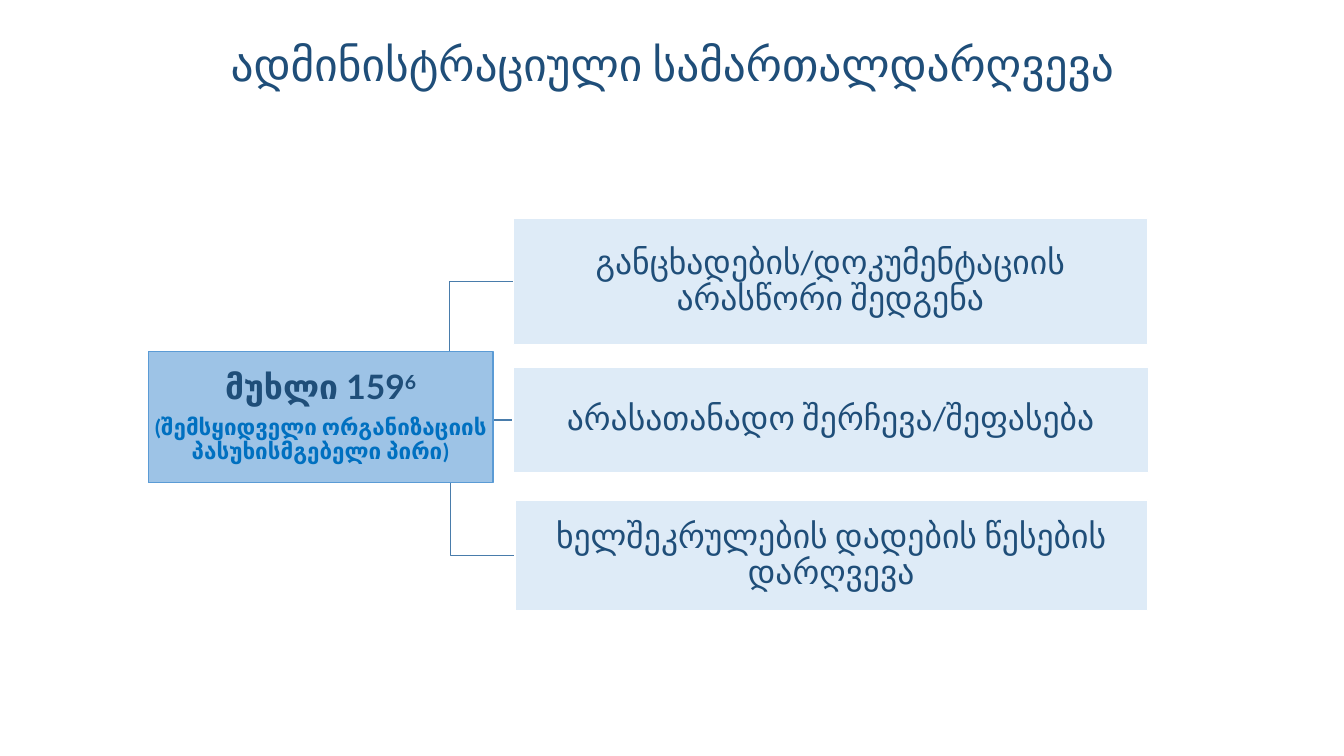
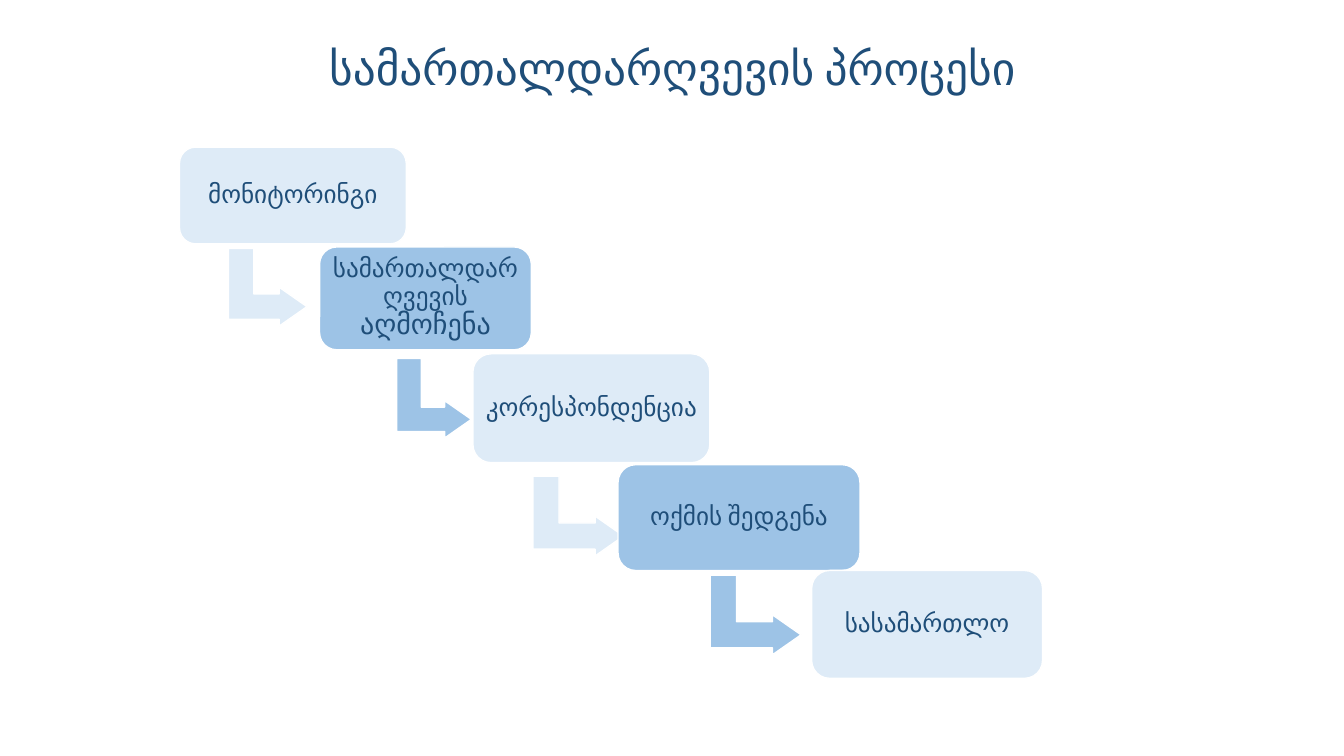
from dataclasses import dataclass

import pptx
import pptx.dml.color
import pptx.enum.shapes
import pptx.enum.text
import pptx.oxml
import pptx.oxml.ns
import pptx.util

Inches = pptx.util.Inches
Pt = pptx.util.Pt
RGBColor = pptx.dml.color.RGBColor
SHAPE = pptx.enum.shapes.MSO_SHAPE
ANCHOR = pptx.enum.text.MSO_ANCHOR

NAVY = RGBColor(0x1F, 0x4E, 0x79)
BLUE = RGBColor(0x00, 0x70, 0xC0)
EDGE = RGBColor(0x5B, 0x9B, 0xD5)
BRANCH = RGBColor(0x49, 0x7C, 0xAB)
MID = RGBColor(0x9D, 0xC3, 0xE6)
PALE = RGBColor(0xDE, 0xEB, 0xF7)
WHITE = RGBColor(0xFF, 0xFF, 0xFF)
FONT = "Calibri"


@dataclass(frozen=True)
class Frame:
    left: float
    top: float
    width: float
    height: float

    def inches(self) -> tuple:
        return tuple(Inches(v) for v in (self.left, self.top, self.width, self.height))


@dataclass(frozen=True)
class Words:
    text: str
    size: float
    color: RGBColor = NAVY
    font: str = FONT
    bold: bool = False
    superscript: bool = False


@dataclass(frozen=True)
class Violation:
    frame: Frame
    text: str


@dataclass(frozen=True)
class Step:
    frame: Frame
    words: tuple
    arrow: Frame | None = None


def write(paragraph, words: tuple) -> None:
    """Fill a centred paragraph with formatted runs."""
    paragraph.alignment = pptx.enum.text.PP_ALIGN.CENTER
    paragraph.line_spacing = 0.9
    for part in words:
        run = paragraph.add_run()
        run.text = part.text
        run.font.name = part.font
        run.font.size = Pt(part.size)
        run.font.bold = part.bold
        run.font.color.rgb = part.color
        if part.superscript:
            run._r.get_or_add_rPr().set("baseline", "30000")


def add_titled_slide(deck, text: str, top: float):
    slide = deck.slides.add_slide(deck.slide_layouts[5])
    title = slide.shapes.title
    title.left, title.top, title.width, title.height = Frame(1.67, top, 10, 1.69).inches()
    frame = title.text_frame
    frame.auto_size = pptx.enum.text.MSO_AUTO_SIZE.NONE
    frame.word_wrap = True
    frame.vertical_anchor = ANCHOR.TOP
    frame.margin_top = Inches(0.24)
    write(frame.paragraphs[0], (Words(text, 32.4),))
    return slide


def add_block(slide, kind, frame: Frame, fill: RGBColor, line: RGBColor = WHITE):
    block = slide.shapes.add_shape(kind, *frame.inches())
    block.shadow.inherit = False
    block.fill.solid()
    block.fill.fore_color.rgb = fill
    block.line.color.rgb = line
    block.line.width = Pt(1)
    return block


def set_text(block, inset: float, *lines: tuple) -> None:
    frame = block.text_frame
    frame.word_wrap = True
    frame.vertical_anchor = ANCHOR.MIDDLE
    frame.margin_left = frame.margin_right = Inches(inset)
    frame.margin_top = frame.margin_bottom = Inches(inset)
    for number, words in enumerate(lines):
        paragraph = frame.add_paragraph() if number else frame.paragraphs[0]
        write(paragraph, words)
        if number < len(lines) - 1:
            paragraph.space_after = Pt(7)


def add_branch(slide, start: tuple, end: tuple) -> None:
    branch = slide.shapes.add_connector(
        pptx.enum.shapes.MSO_CONNECTOR.ELBOW, *(Inches(v) for v in start + end))
    branch.line.color.rgb = BRANCH
    branch.line.width = Pt(1)
    branch._element.spPr.append(pptx.oxml.parse_xml(
        f"<a:effectLst {pptx.oxml.ns.nsdecls('a')}/>"))


def add_arrow(slide, frame: Frame, fill: RGBColor) -> None:
    arrow = add_block(slide, SHAPE.BENT_UP_ARROW, frame, fill)
    arrow.rotation = 90
    for index, value in enumerate((0.328, 0.25, 0.358)):
        arrow.adjustments[index] = value


ARTICLE = Frame(1.47, 3.49, 3.42, 1.3)
BRANCH_START = (3.83, 4.13)
VIOLATIONS = (
    Violation(Frame(5.09, 2.17, 6.29, 1.25), "განცხადების/დოკუმენტაციის არასწორი შედგენა"),
    Violation(Frame(5.09, 3.64, 6.3, 1.05), "არასათანადო შერჩევა/შეფასება"),
    Violation(Frame(5.11, 4.96, 6.27, 1.1), "ხელშეკრულების დადების წესების დარღვევა"),
)
STEPS = (
    Step(Frame(1.78, 1.46, 2.25, 0.96), (Words("მონიტორინგი", 18),),
         Frame(2.27, 2.46, 0.77, 0.78)),
    Step(Frame(3.17, 2.45, 2.1, 1.02),
         (Words("სამართალდარღვევის", 18), Words(" ", 14), Words("აღმოჩენა", 20)),
         Frame(3.91, 3.58, 0.79, 0.74)),
    Step(Frame(4.69, 3.51, 2.35, 1.08), (Words("კორესპონდენცია", 18),),
         Frame(5.34, 4.67, 0.79, 0.9)),
    Step(Frame(6.13, 4.61, 2.4, 1.05), (Words("ოქმის შედგენა", 18),),
         Frame(7.1, 5.65, 0.79, 0.9)),
    Step(Frame(8.05, 5.66, 2.29, 1.07), (Words("სასამართლო", 18),)),
)


def build_violations(deck) -> None:
    slide = add_titled_slide(deck, "ადმინისტრაციული სამართალდარღვევა", 0.18)

    # Branches lie behind the boxes
    for violation in VIOLATIONS:
        box = violation.frame
        add_branch(slide, BRANCH_START, (box.left, box.top + box.height / 2))

    # Article of the code
    article = add_block(slide, SHAPE.RECTANGLE, ARTICLE, MID, EDGE)
    set_text(
        article, 0.02,
        (Words("მუხლი 159", 24, font="Lato", bold=True),
         Words("6", 24, font="Lato", bold=True, superscript=True)),
        (Words("(შემსყიდველი ორგანიზაციის პასუხისმგებელი პირი)", 16, BLUE, bold=True),),
    )

    # Violations under the article
    for violation in VIOLATIONS:
        box = add_block(slide, SHAPE.RECTANGLE, violation.frame, PALE)
        set_text(box, 0.02, (Words(violation.text, 24),))


def build_process(deck) -> None:
    slide = add_titled_slide(deck, "სამართალდარღვევის პროცესი", 0.22)

    # Staircase of steps in alternating colours
    for number, step in enumerate(STEPS):
        fill = MID if number % 2 else PALE
        if step.arrow:
            add_arrow(slide, step.arrow, fill)
        box = add_block(slide, SHAPE.ROUNDED_RECTANGLE, step.frame, fill)
        box.adjustments[0] = 0.167
        set_text(box, 0.07, step.words)


def main() -> None:
    deck = pptx.Presentation()
    deck.slide_width, deck.slide_height = Inches(13.33), Inches(7.5)
    build_violations(deck)
    build_process(deck)
    deck.save("out.pptx")


if __name__ == "__main__":
    main()
